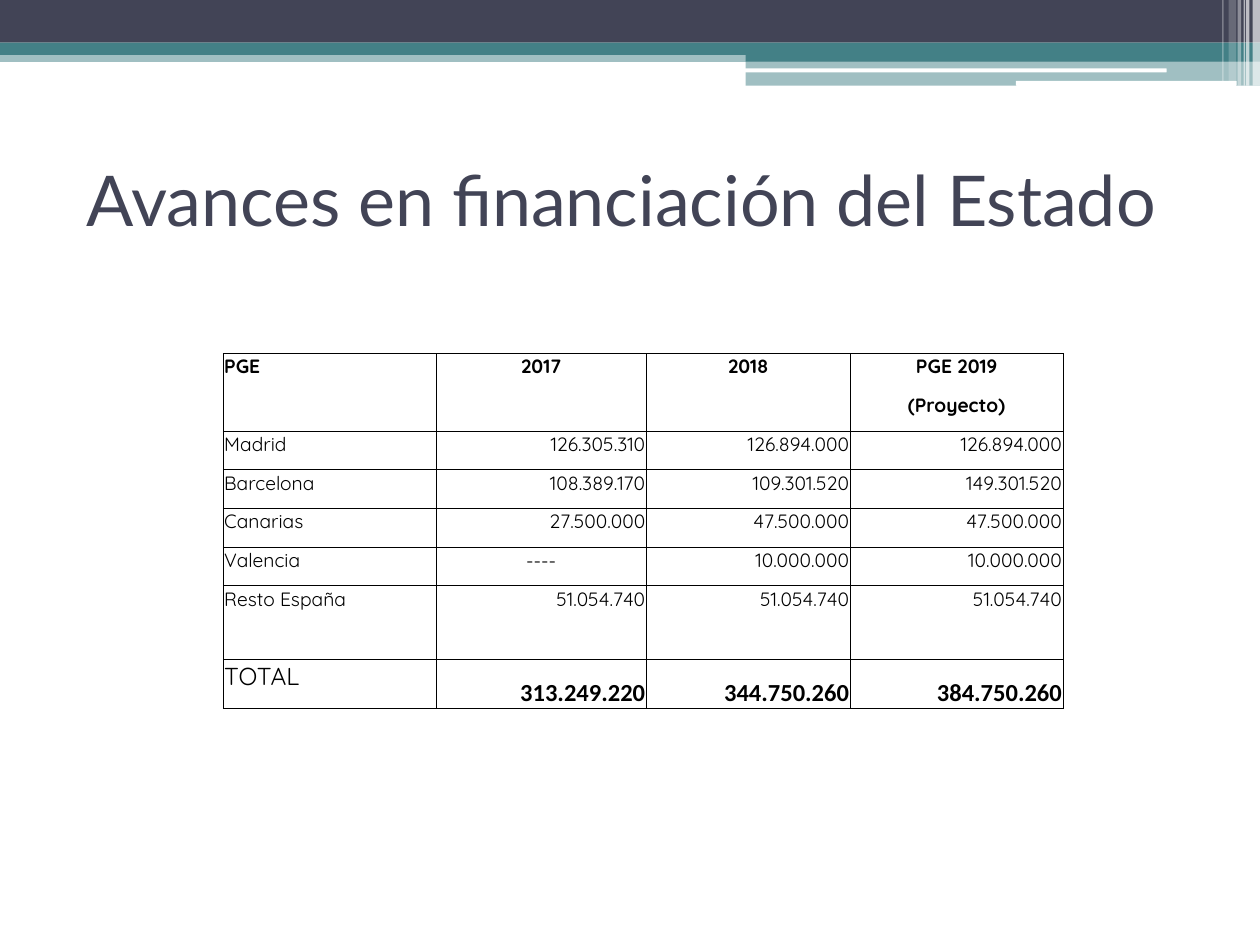
from lxml import etree
from pptx import Presentation
from pptx.dml.color import RGBColor
from pptx.enum.shapes import MSO_SHAPE
from pptx.enum.text import MSO_ANCHOR, PP_ALIGN
from pptx.oxml.ns import qn
from pptx.util import Cm, Pt

RECT, ROUNDED = MSO_SHAPE.RECTANGLE, MSO_SHAPE.ROUNDED_RECTANGLE
LEFT, CENTER, RIGHT = PP_ALIGN.LEFT, PP_ALIGN.CENTER, PP_ALIGN.RIGHT
TOP, MIDDLE, BOTTOM = MSO_ANCHOR.TOP, MSO_ANCHOR.MIDDLE, MSO_ANCHOR.BOTTOM

NAVY = RGBColor(0x42, 0x44, 0x56)
TEAL = RGBColor(0x43, 0x80, 0x86)
WHITE = RGBColor(0xFF, 0xFF, 0xFF)
BLACK = RGBColor(0, 0, 0)

PAGE_WIDTH, PAGE_HEIGHT = 25.4, 19.05

# Left, top, width, height (cm), outline, colour, opacity in percent
BANDS = [
    (0, 1.02, 25.4, 0.23, RECT, TEAL, 50),
    (0, 0, 25.4, 0.86, RECT, NAVY, 100),
    (0, 0.86, 25.4, 0.25, RECT, TEAL, 100),
    (15.03, 0.99, 10.37, 0.25, RECT, TEAL, 100),
    (15.03, 1.23, 10.37, 0.5, RECT, TEAL, 50),
    (15.01, 1.38, 8.51, 0.08, ROUNDED, WHITE, 100),
    (20.48, 1.63, 4.45, 0.1, ROUNDED, WHITE, 100),
]
# Left, width, height (cm), opacity in percent
STRIPES = [
    (25.25, 0.15, 1.73, 65),
    (25.12, 0.07, 1.73, 65),
    (25.07, 0.03, 1.73, 60),
    (24.95, 0.07, 1.73, 40),
    (24.77, 0.15, 1.63, 20),
    (24.64, 0.03, 1.63, 30),
]

COLUMN_WIDTHS = [4.29, 4.24, 4.11, 4.29]
ROW_HEIGHTS = [0.78] * 6 + [1.49, 0.98]
ROWS = [
    ["PGE", "2017", "2018", "PGE 2019"],
    ["", "", "", "(Proyecto)"],
    ["Madrid", "126.305.310", "126.894.000", "126.894.000"],
    ["Barcelona", "108.389.170", "109.301.520", "149.301.520"],
    ["Canarias", "27.500.000", "47.500.000", "47.500.000"],
    ["Valencia", "----", "10.000.000", "10.000.000"],
    ["Resto España", "51.054.740", "51.054.740", "51.054.740"],
    ["TOTAL", "313.249.220", "344.750.260", "384.750.260"],
]
HEADER_ROWS = 2
TOTAL_ROW = len(ROWS) - 1


def add_band(page, left, top, width, height, outline, color, opacity):
    band = page.shapes.add_shape(outline, Cm(left), Cm(top), Cm(width), Cm(height))
    band.shadow.inherit = False
    band.fill.solid()
    band.fill.fore_color.rgb = color
    band.line.fill.background()
    if opacity < 100:
        color_node = band.fill._xPr.find(qn("a:solidFill"))[0]
        etree.SubElement(color_node, qn("a:alpha"), val=str(opacity * 1000))


def add_banner(page, left, top):
    for x, y, width, height, outline, color, opacity in BANDS:
        add_band(page, left + x, top + y, width, height, outline, color, opacity)
    for x, width, height, opacity in STRIPES:
        add_band(page, left + x, top, width, height, RECT, WHITE, opacity)


def add_title(page, left, top, width, height):
    box = page.shapes.add_textbox(Cm(left), Cm(top), Cm(width), Cm(height))
    frame = box.text_frame
    frame.word_wrap = True
    frame.vertical_anchor = MIDDLE
    para = frame.paragraphs[0]
    para.text = "Avances en financiación del Estado"
    para.font.name = "Lato"
    para.font.size = Pt(40)
    para.font.color.rgb = NAVY


def set_borders(cell, sides):
    """Draw thin black lines on the named sides (L, R, T, B), none elsewhere."""
    properties = cell._tc.get_or_add_tcPr()
    for index, side in enumerate("LRTB"):
        line = etree.Element(qn(f"a:ln{side}"), w=str(Pt(0.5)))
        if side in sides:
            fill = etree.SubElement(line, qn("a:solidFill"))
            etree.SubElement(fill, qn("a:srgbClr"), val=str(BLACK))
        else:
            etree.SubElement(line, qn("a:noFill"))
        properties.insert(index, line)


def write_cell(cell, text, row, column):
    is_header = row < HEADER_ROWS
    is_total = row == TOTAL_ROW
    is_sum = is_total and column > 0
    cell.margin_left = cell.margin_right = cell.margin_top = Cm(0.02)
    cell.margin_bottom = 0
    cell.vertical_anchor = BOTTOM if is_sum else TOP
    para = cell.text_frame.paragraphs[0]
    para.text = text
    if column == 0:
        para.alignment = LEFT
    else:
        para.alignment = CENTER if is_header or text == "----" else RIGHT
    para.font.name = "Calibri" if is_sum else "Quicksand"
    para.font.size = Pt(14 if is_total else 11)
    para.font.bold = is_header or is_sum
    para.font.color.rgb = BLACK


def add_funding_table(page, left, top):
    frame = page.shapes.add_table(
        len(ROWS), len(COLUMN_WIDTHS), Cm(left), Cm(top),
        Cm(sum(COLUMN_WIDTHS)), Cm(sum(ROW_HEIGHTS)))
    table = frame.table
    table.first_row = table.horz_banding = False
    for column, width in zip(table.columns, COLUMN_WIDTHS):
        column.width = Cm(width)
    for row, height in zip(table.rows, ROW_HEIGHTS):
        row.height = Cm(height)

    last_column = len(COLUMN_WIDTHS) - 1
    split_header_sides = {0: "LRT", 1: "LRB"}
    for row, texts in enumerate(ROWS):
        for column, text in enumerate(texts):
            cell = table.cell(row, column)
            write_cell(cell, text, row, column)
            in_split_header = column == last_column and row < HEADER_ROWS
            set_borders(cell, split_header_sides[row] if in_split_header else "LRTB")
            cell.fill.background()
    for column in range(last_column):
        table.cell(0, column).merge(table.cell(HEADER_ROWS - 1, column))


def main():
    deck = Presentation()
    deck.slide_width, deck.slide_height = Cm(PAGE_WIDTH), Cm(PAGE_HEIGHT)
    page = deck.slides.add_slide(deck.slide_layouts[6])
    add_banner(page, 0, 0)
    add_title(page, 1.5, 2.51, 22.86, 2.97)
    add_funding_table(page, 4.5, 7.13)
    deck.save("out.pptx")


if __name__ == "__main__":
    main()
